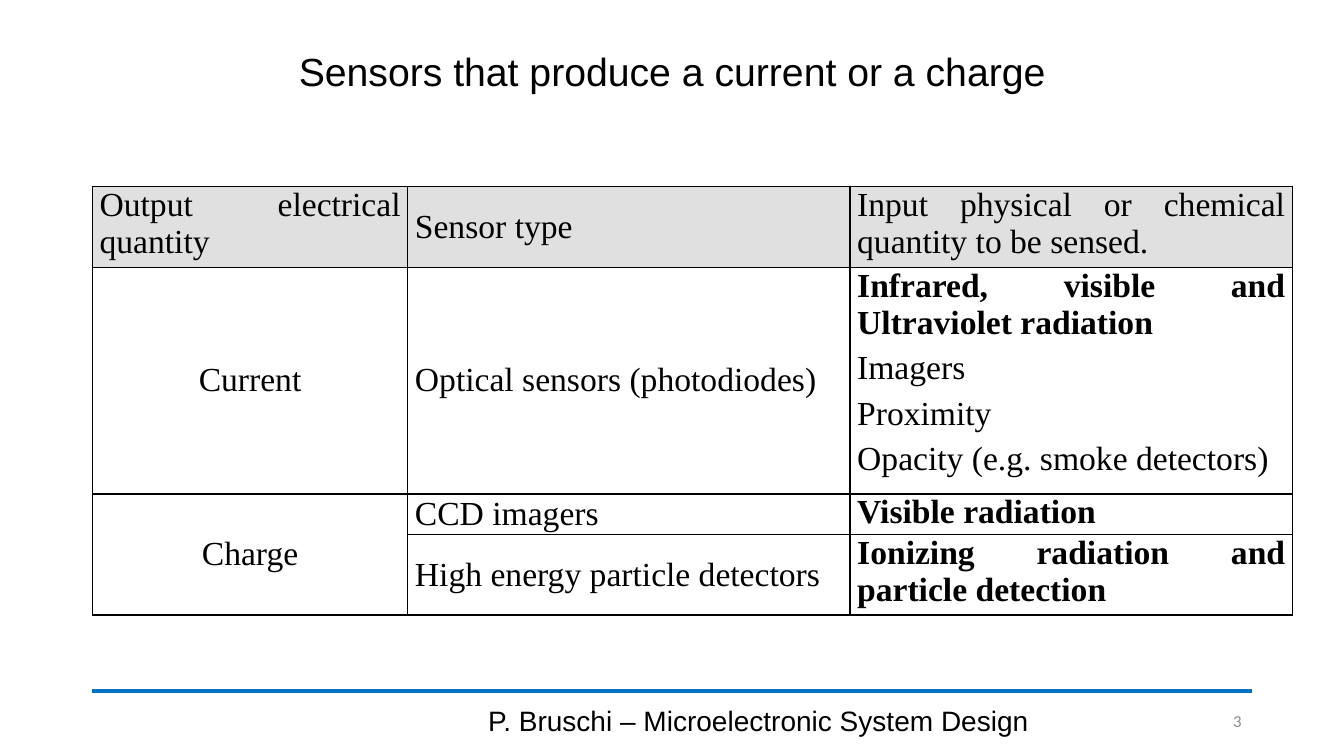
import pptx
import pptx.util
import pptx.dml.color
import pptx.enum.shapes
import pptx.enum.text
import lxml.etree
import pptx.oxml.ns

Pt = pptx.util.Pt
ALIGN = pptx.enum.text.PP_ALIGN
MID = pptx.enum.text.MSO_ANCHOR.MIDDLE
TOP = pptx.enum.text.MSO_ANCHOR.TOP
HUES = {"ink": "000000", "rule": "0070C0", "head": "E0E0E0", "note": "8C8C8C"}


def rgb(hue):
    return pptx.dml.color.RGBColor.from_string(HUES[hue])


def node(base, tag, **attrs):
    return lxml.etree.SubElement(base, pptx.oxml.ns.qn(tag), **attrs)


class Deck:
    """Places items on a grid of 160 columns and 90 rows."""

    def __init__(self):
        self.show = pptx.Presentation()
        self.show.slide_width = pptx.util.Inches(13.33)
        self.show.slide_height = pptx.util.Inches(7.5)
        self.page = self.show.slides.add_slide(self.show.slide_layouts[6])

    def col(self, n):
        return round(self.show.slide_width * n / 160)

    def row(self, n):
        return round(self.show.slide_height * n / 90)

    def box(self, x, y, w, h):
        return self.col(x), self.row(y), self.col(w), self.row(h)

    def add_text(self, para, text, size, font, hue="ink", bold=False):
        run = para.add_run()
        run.text = text
        run.font.size = Pt(size)
        run.font.name = font
        run.font.bold = bold
        run.font.color.rgb = rgb(hue)

    def label(self, spot, text, size, font, align, hue="ink", lead=1.0):
        frame = self.page.shapes.add_textbox(*self.box(*spot)).text_frame
        frame.word_wrap = True
        frame.vertical_anchor = MID
        para = frame.paragraphs[0]
        para.alignment = align
        para.line_spacing = lead
        self.add_text(para, text, size, font, hue)

    def rule(self, x, y, end, hue, width):
        line = self.page.shapes.add_connector(
            pptx.enum.shapes.MSO_CONNECTOR.STRAIGHT,
            self.col(x), self.row(y), self.col(end), self.row(y))
        line.line.color.rgb = rgb(hue)
        line.line.width = Pt(width)
        node(line._element.spPr, "a:effectLst")

    def edge(self, cell):
        prop = cell._tc.get_or_add_tcPr()
        for side in "LRTB":
            line = node(prop, f"a:ln{side}", w=str(Pt(1)))
            fill = node(line, "a:solidFill")
            node(fill, "a:srgbClr", val=HUES["ink"])

    def cell(self, cell, lines, align, anchor, fill):
        self.edge(cell)
        if fill:
            cell.fill.solid()
            cell.fill.fore_color.rgb = rgb(fill)
        else:
            cell.fill.background()
        cell.margin_left = cell.margin_right = self.col(0.85)
        cell.margin_top = cell.margin_bottom = 0
        cell.vertical_anchor = anchor
        frame = cell.text_frame
        for i, (text, bold) in enumerate(lines):
            para = frame.add_paragraph() if i else frame.paragraphs[0]
            para.alignment = align
            para.space_after = Pt(6)
            self.add_text(para, text, 24, "Times New Roman", bold=bold)

    def table(self, x, y, cols, rows, data):
        grid = self.page.shapes.add_table(
            len(rows), len(cols), *self.box(x, y, sum(cols), sum(rows))).table
        grid.first_row = grid.horz_banding = False
        for c, w in enumerate(cols):
            grid.columns[c].width = self.col(w)
        for r, h in enumerate(rows):
            grid.rows[r].height = self.row(h)
            for c, lines in enumerate(data[r]):
                head = r == 0
                align = ALIGN.CENTER if c == 0 and not head else ALIGN.JUSTIFY
                anchor = MID if c == 1 or (c == 0 and not head) else TOP
                self.cell(grid.cell(r, c), lines, align, anchor,
                          "head" if head else None)
        return grid


def main():
    deck = Deck()

    # Title
    deck.label((11, 4.4, 138, 8.7), "Sensors that produce a current or a charge",
               28, "Arial", ALIGN.CENTER, lead=0.9)

    # Sensor table: each cell is a list of (text, bold) lines
    data = [
        [[("Output electrical quantity", False)],
         [("Sensor type", False)],
         [("Input physical or chemical quantity to be sensed.", False)]],
        [[("Current", False)],
         [("Optical sensors (photodiodes)", False)],
         [("Infrared, visible and Ultraviolet radiation", True),
          ("Imagers", False),
          ("Proximity", False),
          ("Opacity (e.g. smoke detectors)", False)]],
        [[("Charge", False)],
         [("CCD imagers", False)],
         [("Visible radiation", True)]],
        [[],
         [("High energy particle detectors", False)],
         [("Ionizing radiation and particle detection ", True)]],
    ]
    grid = deck.table(11, 22.2, [37.55, 52.65, 52.65], [8.9, 25.1, 4.45, 8.9], data)
    grid.cell(2, 0).merge(grid.cell(3, 0))

    # Footer
    deck.rule(11, 82.3, 149, "rule", 2.75)
    deck.label((53, 83.4, 74.6, 4.8), "P. Bruschi – Microelectronic System Design",
               20, "Arial", ALIGN.CENTER)
    deck.label((137.4, 83.4, 11.6, 4.8), "3", 12, "Calibri", ALIGN.RIGHT, "note")

    deck.show.save("out.pptx")


if __name__ == "__main__":
    main()
